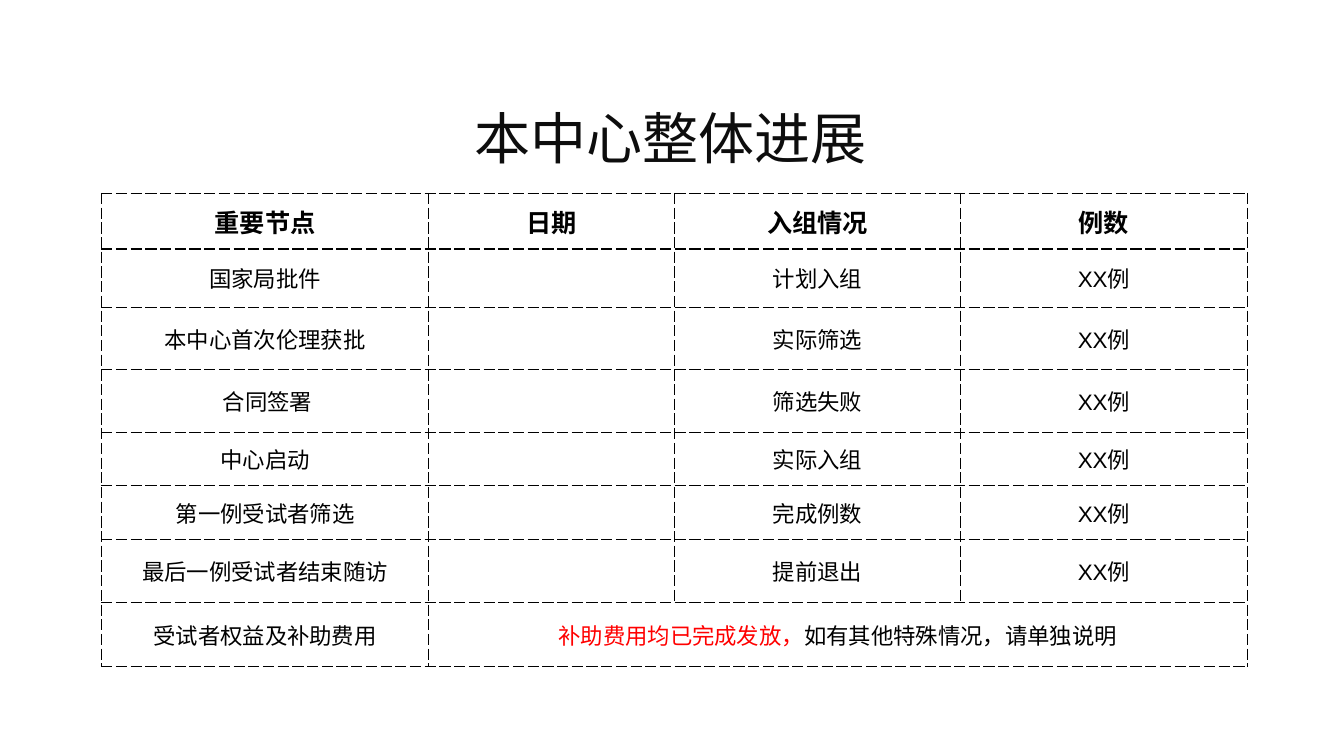
from lxml import etree
from pptx import Presentation
from pptx.dml.color import RGBColor
from pptx.enum.text import MSO_ANCHOR, PP_ALIGN
from pptx.oxml import parse_xml
from pptx.oxml.ns import nsdecls, qn
from pptx.util import Inches, Pt

CENTER = PP_ALIGN.CENTER
MIDDLE = MSO_ANCHOR.MIDDLE
BLACK = RGBColor(0x00, 0x00, 0x00)
TITLE_COLOR = RGBColor(0x0D, 0x0D, 0x0D)
RED = RGBColor(0xFF, 0x00, 0x00)
CJK_FONT = "Noto Sans CJK SC"

COLUMN_WIDTHS = [3.24, 2.44, 2.84, 2.84]
ROW_HEIGHTS = [0.55, 0.58, 0.62, 0.62, 0.53, 0.53, 0.63, 0.63]
HEADERS = ["重要节点", "日期", "入组情况", "例数"]
MILESTONES = [
    ("国家局批件", "计划入组", "Arial"),
    ("本中心首次伦理获批", "实际筛选", "Calibri"),
    (" 合同签署", "筛选失败", "Arial"),
    ("中心启动", "实际入组", "Arial"),
    ("第一例受试者筛选", "完成例数", "Arial"),
    ("最后一例受试者结束随访", "提前退出", "Calibri"),
]


def add_run(paragraph, text, size, font_name=CJK_FONT, color=BLACK, bold=False):
    run = paragraph.add_run()
    run.text = text
    formats = {"size": Pt(size), "name": font_name, "bold": bold}
    for attribute, value in formats.items():
        setattr(run.font, attribute, value)
    run.font.color.rgb = color
    east_asian = etree.SubElement(run.font._element, qn("a:ea"))
    east_asian.set("typeface", CJK_FONT)


def fill_cell(cell, runs):
    cell.vertical_anchor = MIDDLE
    paragraph = cell.text_frame.paragraphs[0]
    paragraph.alignment = CENTER
    for run_format in runs:
        add_run(paragraph, **run_format)


presentation = Presentation()
presentation.slide_width = Inches(13.33)
presentation.slide_height = Inches(7.5)
slide = presentation.slides.add_slide(presentation.slide_layouts[6])

title = slide.shapes.add_textbox(Inches(4.61), Inches(0.98), Inches(7.76), Inches(0.77))
title.text_frame.word_wrap = True
add_run(title.text_frame.paragraphs[0], "本中心整体进展", 40, color=TITLE_COLOR)

table = slide.shapes.add_table(
    len(ROW_HEIGHTS), len(COLUMN_WIDTHS), Inches(1.01), Inches(1.92),
    Inches(sum(COLUMN_WIDTHS)), Inches(sum(ROW_HEIGHTS)),
).table
table.first_row = False
table.horz_banding = False
for column, width in zip(table.columns, COLUMN_WIDTHS):
    column.width = Inches(width)
for row, height in zip(table.rows, ROW_HEIGHTS):
    row.height = Inches(height)

for cell in table.iter_cells():
    properties = cell._tc.get_or_add_tcPr()
    for side in ("lnL", "lnR", "lnT", "lnB"):
        properties.append(parse_xml(
            f'<a:{side} {nsdecls("a")} w="{Pt(1)}"><a:solidFill><a:srgbClr val="{BLACK}"/>'
            f'</a:solidFill><a:prstDash val="sysDash"/></a:{side}>'
        ))
    cell.fill.background()

for column_index, header in enumerate(HEADERS):
    fill_cell(table.cell(0, column_index), [{"text": header, "size": 18, "bold": True}])

for row_index, (milestone, status, status_font) in enumerate(MILESTONES, start=1):
    fill_cell(table.cell(row_index, 0), [{"text": milestone, "size": 16}])
    fill_cell(table.cell(row_index, 2), [{"text": status, "size": 16, "font_name": status_font}])
    fill_cell(table.cell(row_index, 3), [
        {"text": "XX", "size": 16, "font_name": "Arial"},
        {"text": "例", "size": 16, "font_name": "Calibri"},
    ])

last_row = len(ROW_HEIGHTS) - 1
table.cell(last_row, 1).merge(table.cell(last_row, 3))
fill_cell(table.cell(last_row, 0), [{"text": "受试者权益及补助费用", "size": 16, "font_name": "Calibri"}])
fill_cell(table.cell(last_row, 1), [
    {"text": "补助费用均已完成发放，", "size": 16, "font_name": "Calibri", "color": RED},
    {"text": "如有其他特殊情况，请单独说明", "size": 16},
])

presentation.save("out.pptx")
